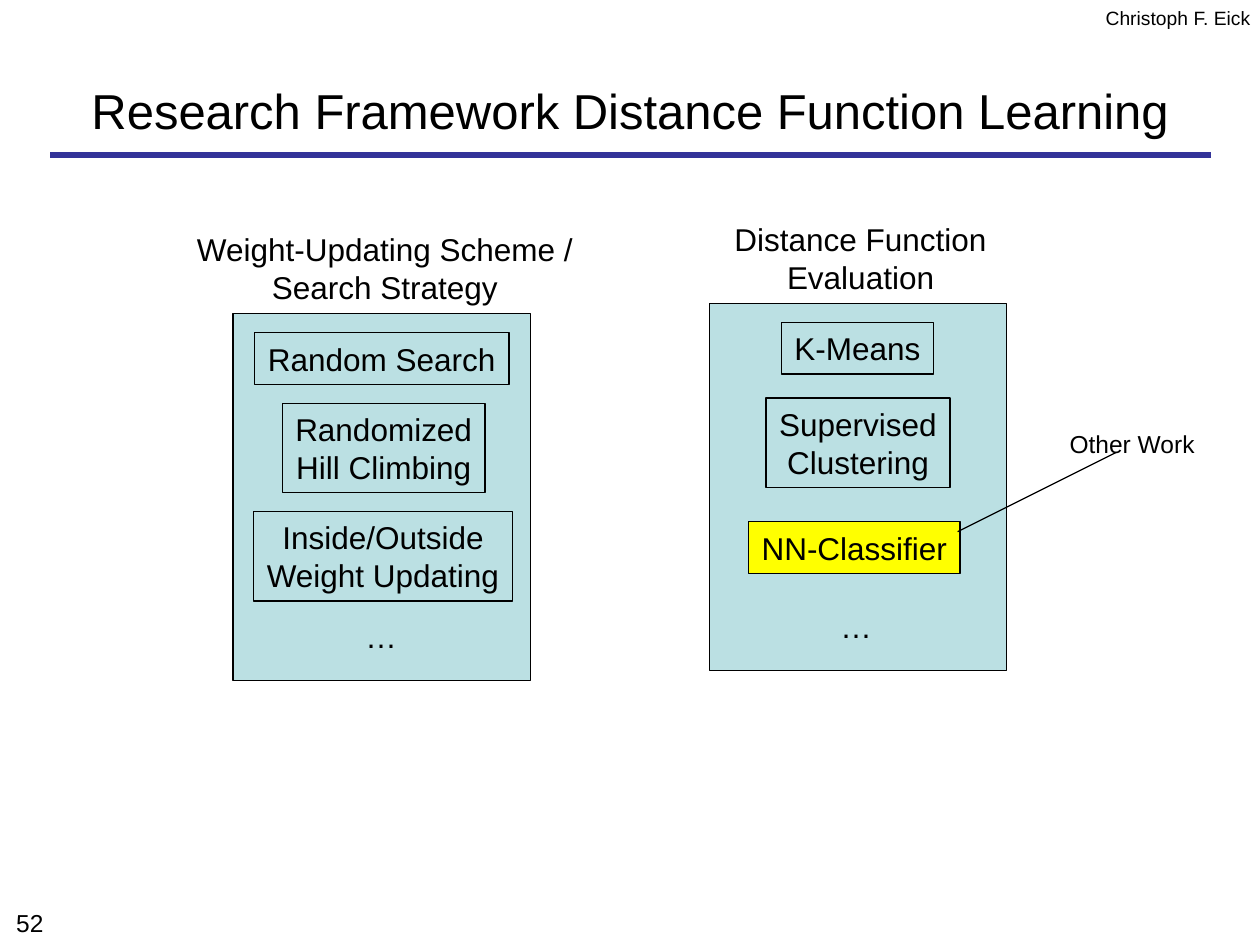
from lxml import etree
from pptx import Presentation
from pptx.dml.color import RGBColor
from pptx.enum.shapes import MSO_CONNECTOR, MSO_SHAPE
from pptx.enum.text import MSO_ANCHOR, PP_ALIGN
from pptx.oxml.ns import qn
from pptx.util import Inches, Pt

RECT = MSO_SHAPE.RECTANGLE
STRAIGHT = MSO_CONNECTOR.STRAIGHT
LEFT, CENTER = PP_ALIGN.LEFT, PP_ALIGN.CENTER
TOP, MIDDLE = MSO_ANCHOR.TOP, MSO_ANCHOR.MIDDLE
BLACK, BLUE, TEAL, YELLOW = "000000", "333399", "BBE0E3", "FFFF00"


def color(value):
    return RGBColor.from_string(value)


def write(s, text, size, align=CENTER, anchor=TOP, wrap=False):
    tf = s.text_frame
    tf.word_wrap = wrap
    tf.vertical_anchor = anchor
    for i, line in enumerate(text.split("\n")):
        p = tf.add_paragraph() if i else tf.paragraphs[0]
        p.text = line
        p.alignment = align
        p.font.name = "Arial"
        p.font.size = Pt(size)
        p.font.color.rgb = color(BLACK)


prs = Presentation()
prs.slide_width, prs.slide_height = Inches(10), Inches(7.5)
slide = prs.slides.add_slide(prs.slide_layouts[6])
shapes = slide.shapes

# Panels and the method boxes inside them: left, top, width, height, fill, text
boxes = [
    (1.85, 2.49, 2.36, 2.91, TEAL, ""),
    (2.02, 2.64, 2.02, 0.41, TEAL, "Random Search"),
    (2.24, 3.2, 1.61, 0.71, TEAL, "Randomized\nHill Climbing"),
    (2.01, 4.06, 2.06, 0.71, TEAL, "Inside/Outside\nWeight Updating"),
    (5.63, 2.41, 2.36, 2.91, TEAL, ""),
    (6.2, 2.56, 1.21, 0.41, TEAL, "K-Means"),
    (6.08, 3.16, 1.46, 0.71, TEAL, "Supervised\nClustering"),
    (5.94, 4.14, 1.68, 0.41, YELLOW, "NN-Classifier"),
]
for left, top, width, height, fill, text in boxes:
    s = shapes.add_shape(RECT, Inches(left), Inches(top), Inches(width), Inches(height))
    s.shadow.inherit = False
    s.fill.solid()
    s.fill.fore_color.rgb = color(fill)
    s.line.color.rgb = color(BLACK)
    s.line.width = Pt(0.75)
    if text:
        write(s, text, 18, anchor=MIDDLE)

# Title rule and the line to the "Other Work" note
lines = [
    (0.4, 1.23, 9.61, 1.23, BLUE, 3),
    (7.6, 4.22, 8.86, 3.59, BLACK, 0.75),
]
for x1, y1, x2, y2, stroke, weight in lines:
    s = shapes.add_connector(STRAIGHT, Inches(x1), Inches(y1), Inches(x2), Inches(y2))
    s.line.color.rgb = color(stroke)
    s.line.width = Pt(weight)
    etree.SubElement(s._element.spPr, qn("a:effectLst"))

# Title, headings, notes and page number
labels = [
    (8.66, 0, 1.38, 0.29, "Christoph F. Eick", 11, CENTER, TOP, False),
    (0.5, 0.52, 9, 0.71, "Research Framework Distance Function Learning", 28, CENTER, MIDDLE, True),
    (1.46, 1.78, 3.19, 0.7, "Weight-Updating Scheme /\nSearch Strategy", 18, CENTER, TOP, False),
    (5.73, 1.7, 2.2, 0.7, "Distance Function\nEvaluation", 18, CENTER, TOP, False),
    (2.8, 4.85, 0.45, 0.4, "…", 18, CENTER, TOP, False),
    (6.57, 4.77, 0.45, 0.4, "…", 18, CENTER, TOP, False),
    (8.39, 3.36, 1.19, 0.33, "Other Work", 14, CENTER, TOP, False),
    (0.03, 7.16, 0.48, 0.31, "52", 14, LEFT, TOP, True),
]
for left, top, width, height, text, size, align, anchor, wrap in labels:
    s = shapes.add_textbox(Inches(left), Inches(top), Inches(width), Inches(height))
    write(s, text, size, align, anchor, wrap)

prs.save("out.pptx")
